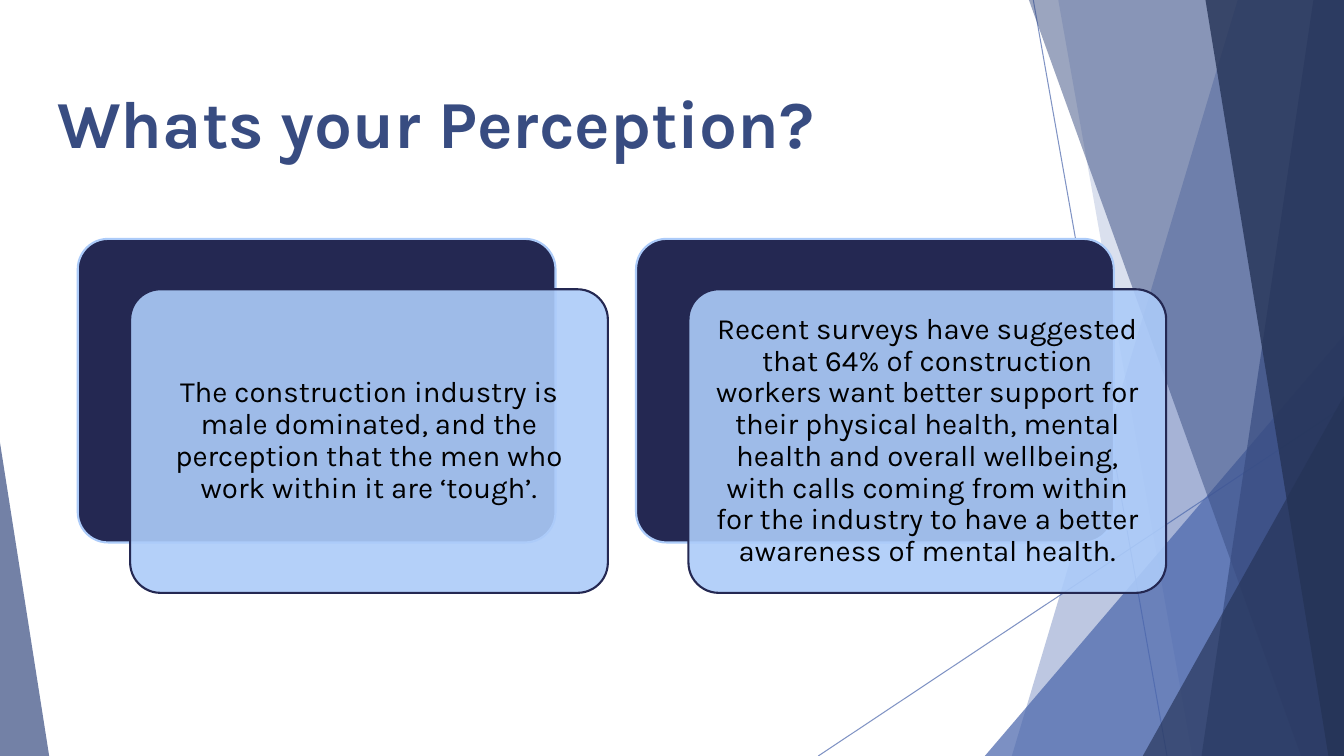
from dataclasses import dataclass

from lxml.etree import SubElement
from pptx import Presentation
from pptx.dml.color import RGBColor
from pptx.enum.shapes import MSO_CONNECTOR, MSO_SHAPE
from pptx.enum.text import MSO_ANCHOR, MSO_AUTO_SIZE, PP_ALIGN
from pptx.oxml.ns import qn
from pptx.util import Cm, Pt


@dataclass(frozen=True)
class Theme:
    font: str = "Karla"
    blue: str = "4A66AC"
    mid_blue: str = "384C81"
    dark_blue: str = "253356"
    navy: str = "242852"
    pale_blue: str = "ACCBF9"
    text: str = "000000"
    title_size: float = 48
    body_size: float = 21
    thin_line: float = 0.75
    card_line: float = 1.5


@dataclass(frozen=True)
class Ray:
    start: tuple[float, float]
    end: tuple[float, float]


@dataclass(frozen=True)
class Band:
    """A facet from a slanted left edge to the right edge of the slide."""
    top_x: float
    bottom_x: float
    color: str
    opacity: int


@dataclass(frozen=True)
class Corner:
    """A triangle standing on the bottom edge, its apex at 0 (left) to 1 (right)."""
    left: float
    top: float
    width: float
    apex: float
    color: str
    opacity: int


THEME = Theme()
WIDTH, HEIGHT = 33.87, 19.05

RAYS = [Ray((26.04, 0), (29.41, HEIGHT)), Ray((WIDTH, 10.24), (20.62, HEIGHT))]
FACETS = [
    Band(31.19, 25.5, THEME.blue, 36),
    Band(26.67, 30.05, THEME.blue, 20),
    Corner(24.82, 8.46, 9.05, 1, THEME.blue, 72),
    Band(25.93, 32.79, THEME.mid_blue, 50),
    Band(33.1, 30.28, THEME.mid_blue, 70),
    Band(30.38, 33.48, THEME.dark_blue, 80),
    Corner(28.8, 9.98, 5.07, 1, THEME.dark_blue, 66),
    Corner(0, 11.15, 1.24, 0, THEME.mid_blue, 70),
]

CARD_LEFT, CARD_TOP, CARD_PITCH = 1.96, 6.02, 14.07
CARD_WIDTH, CARD_HEIGHT = 12.04, 7.65
FRONT_SHIFT_X, FRONT_SHIFT_Y = 1.32, 1.27
CARD_INSET = 0.23
CARD_TEXTS = [
    "The construction industry is male dominated, and the perception that "
    "the men who work within it are ‘tough’.",
    "Recent surveys have suggested that 64% of construction workers want better "
    "support for their physical health, mental health and overall wellbeing, with "
    "calls coming from within for the industry to have a better awareness of "
    "mental health.",
]


def set_opacity(shape, opacity: int) -> None:
    """Set the opacity, in percent, of the first solid colour of a shape."""
    color = next(shape.element.iter(qn("a:srgbClr")))
    SubElement(color, qn("a:alpha"), val=str(opacity * 1000))


def style_shape(shape, color: str, opacity: int = 100, line: str | None = None) -> None:
    shape.shadow.inherit = False
    shape.fill.solid()
    shape.fill.fore_color.rgb = RGBColor.from_string(color)
    if opacity < 100:
        set_opacity(shape, opacity)
    if line:
        shape.line.color.rgb = RGBColor.from_string(line)
        shape.line.width = Pt(THEME.card_line)
    else:
        shape.line.fill.background()


def write_text(shape, text: str, *, size: float, color: str, bold: bool = False,
               align=PP_ALIGN.LEFT, line_spacing: float | None = None) -> None:
    frame = shape.text_frame
    frame.word_wrap = True
    frame.auto_size = MSO_AUTO_SIZE.NONE
    frame.vertical_anchor = MSO_ANCHOR.MIDDLE
    paragraph = frame.paragraphs[0]
    paragraph.alignment = align
    if line_spacing:
        paragraph.line_spacing = line_spacing
    run = paragraph.add_run()
    run.text = text
    run.font.name = THEME.font
    run.font.size = Pt(size)
    run.font.bold = bold
    run.font.color.rgb = RGBColor.from_string(color)


def draw_ray(slide, ray: Ray) -> None:
    connector = slide.shapes.add_connector(
        MSO_CONNECTOR.STRAIGHT, *map(Cm, ray.start + ray.end))
    connector.line.color.rgb = RGBColor.from_string(THEME.blue)
    connector.line.width = Pt(THEME.thin_line)
    set_opacity(connector, 70)
    SubElement(connector.element.find(qn("p:spPr")), qn("a:effectLst"))


def draw_facet(slide, facet: Band | Corner) -> None:
    if isinstance(facet, Band):
        builder = slide.shapes.build_freeform(Cm(facet.top_x), 0)
        corners = [(WIDTH, 0), (WIDTH, HEIGHT), (facet.bottom_x, HEIGHT)]
        builder.add_line_segments([(Cm(x), Cm(y)) for x, y in corners], close=True)
        shape = builder.convert_to_shape()
    else:
        shape = slide.shapes.add_shape(
            MSO_SHAPE.ISOSCELES_TRIANGLE, Cm(facet.left), Cm(facet.top),
            Cm(facet.width), Cm(HEIGHT - facet.top))
        shape.adjustments[0] = facet.apex
    style_shape(shape, facet.color, facet.opacity)


def add_panel(slide, left: float, top: float, color: str, line: str, opacity: int = 100):
    panel = slide.shapes.add_shape(
        MSO_SHAPE.ROUNDED_RECTANGLE, Cm(left), Cm(top), Cm(CARD_WIDTH), Cm(CARD_HEIGHT))
    panel.adjustments[0] = 0.1
    style_shape(panel, color, opacity, line)
    return panel


def draw_card(slide, left: float, text: str) -> None:
    """Draw a dark panel with a translucent text panel shifted over it."""
    add_panel(slide, left, CARD_TOP, THEME.navy, THEME.pale_blue)
    front = add_panel(slide, left + FRONT_SHIFT_X, CARD_TOP + FRONT_SHIFT_Y,
                      THEME.pale_blue, THEME.navy, 90)
    frame = front.text_frame
    frame.margin_left = frame.margin_right = Cm(CARD_INSET)
    frame.margin_top = frame.margin_bottom = Cm(CARD_INSET)
    write_text(front, text, size=THEME.body_size, color=THEME.text,
               align=PP_ALIGN.CENTER, line_spacing=0.9)


def main() -> None:
    presentation = Presentation()
    presentation.slide_width, presentation.slide_height = Cm(WIDTH), Cm(HEIGHT)
    slide = presentation.slides.add_slide(presentation.slide_layouts.get_by_name("Title Only"))

    for ray in RAYS:
        draw_ray(slide, ray)
    for facet in FACETS:
        draw_facet(slide, facet)

    title = slide.shapes.title
    title.left, title.top, title.width, title.height = map(Cm, (1.19, 0.91, 24.59, 4.32))
    write_text(title, "Whats your Perception?", size=THEME.title_size,
               color=THEME.mid_blue, bold=True)

    for column, text in enumerate(CARD_TEXTS):
        draw_card(slide, CARD_LEFT + column * CARD_PITCH, text)

    presentation.save("out.pptx")


if __name__ == "__main__":
    main()
